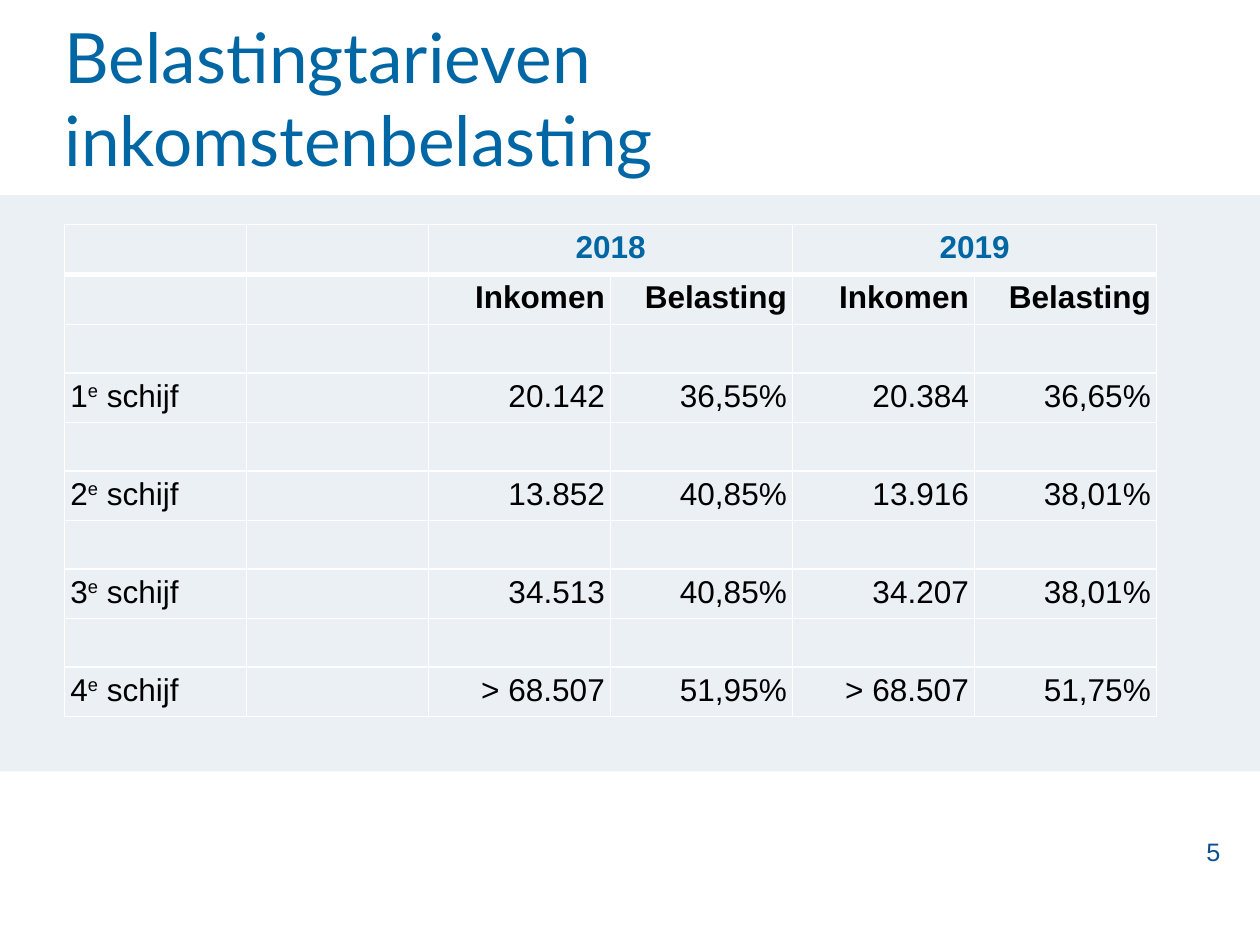
from pptx import Presentation
from pptx.dml.color import RGBColor
from pptx.enum.shapes import MSO_SHAPE
from pptx.enum.text import MSO_ANCHOR, MSO_AUTO_SIZE, PP_ALIGN
from pptx.oxml import parse_xml
from pptx.oxml.ns import nsdecls
from pptx.util import Inches, Pt

RECT = MSO_SHAPE.RECTANGLE
MIDDLE = MSO_ANCHOR.MIDDLE
NO_FIT = MSO_AUTO_SIZE.NONE
LEFT, CENTER, RIGHT = PP_ALIGN.LEFT, PP_ALIGN.CENTER, PP_ALIGN.RIGHT

BLUE = RGBColor(0x00, 0x66, 0xA4)
NAVY = RGBColor(0x09, 0x51, 0x93)
PALE = RGBColor(0xEB, 0xF0, 0xF5)
BLACK = RGBColor(0x00, 0x00, 0x00)

HEADS = ["Inkomen", "Belasting"] * 2
RATES = [
    ["20.142", "36,55%", "20.384", "36,65%"],
    ["13.852", "40,85%", "13.916", "38,01%"],
    ["34.513", "40,85%", "34.207", "38,01%"],
    ["> 68.507", "51,95%", "> 68.507", "51,75%"],
]
ROWS, COLS = 10, 6


def write(frame, text, size=20, font="Arial", color=BLACK, bold=False,
          align=LEFT, raised=False):
    """Add a run to the first paragraph of a text frame."""
    para = frame.paragraphs[0]
    para.alignment = align
    run = para.add_run()
    run.text = text
    run.font.size = Pt(size)
    run.font.name = font
    run.font.bold = bold
    run.font.color.rgb = color
    if raised:
        run.font._element.set("baseline", "30000")


def edge(cell, side, width):
    """Draw one white border of a table cell."""
    cell._tc.get_or_add_tcPr().append(parse_xml(
        f'<a:ln{side} {nsdecls("a")} w="{Pt(width)}"><a:solidFill>'
        f'<a:srgbClr val="FFFFFF"/></a:solidFill></a:ln{side}>'))


deck = Presentation()
deck.slide_width, deck.slide_height = Inches(11.11), Inches(8.33)
slide = deck.slides.add_slide(deck.slide_layouts[5])

# Pale band behind the table
band = slide.shapes.add_shape(RECT, 0, Inches(1.72), deck.slide_width, Inches(5.08))
band.shadow.inherit = False
band.fill.solid()
band.fill.fore_color.rgb = PALE
band.line.fill.background()

# Title
title = slide.shapes.title
title.left, title.top = Inches(0.57), 0
title.width, title.height = Inches(9.8), Inches(1.72)
frame = title.text_frame
frame.margin_left = frame.margin_right = frame.margin_top = frame.margin_bottom = 0
frame.vertical_anchor = MIDDLE
frame.auto_size = NO_FIT
frame.word_wrap = True
write(frame, "Belastingtarieven inkomstenbelasting", size=44, font="Lato", color=BLUE)

# Page number
page = slide.shapes.add_textbox(Inches(10.57), Inches(7.33), Inches(0.25), Inches(0.35))
frame = page.text_frame
frame.margin_left = frame.margin_right = Inches(0.06)
frame.margin_top = frame.margin_bottom = Inches(0.06)
frame.vertical_anchor = MIDDLE
frame.word_wrap = False
write(frame, "5", size=16, color=NAVY, align=RIGHT)

# Table grid
table = slide.shapes.add_table(ROWS, COLS, Inches(0.57), Inches(1.98),
                               Inches(9.63), Inches(4.3)).table
table.horz_banding = False
for col in table.columns:
    col.width = Inches(1.605)
for r, row in enumerate(table.rows):
    row.height = Inches(0.44 if r < 2 else 0.43)
    for cell in row.cells:
        cell.margin_left = cell.margin_right = Inches(0.05)
        cell.margin_top = cell.margin_bottom = Inches(0.05)
        edge(cell, "L", 1)
        edge(cell, "R", 1)
        edge(cell, "T", 3 if r == 1 else 1)
        edge(cell, "B", 3 if r == 0 else 1)
        cell.fill.background()

# Years and column heads
for c, year in ((2, "2018"), (4, "2019")):
    table.cell(0, c).merge(table.cell(0, c + 1))
    write(table.cell(0, c).text_frame, year, color=BLUE, bold=True, align=CENTER)
for c, head in enumerate(HEADS, 2):
    write(table.cell(1, c).text_frame, head, bold=True, align=RIGHT)

# Tax brackets, on every second row
for n, rates in enumerate(RATES, 1):
    r = 2 * n + 1
    label = table.cell(r, 0).text_frame
    write(label, str(n))
    write(label, "e", raised=True)
    write(label, " schijf")
    for c, value in enumerate(rates, 2):
        write(table.cell(r, c).text_frame, value, align=RIGHT)

deck.save("out.pptx")
